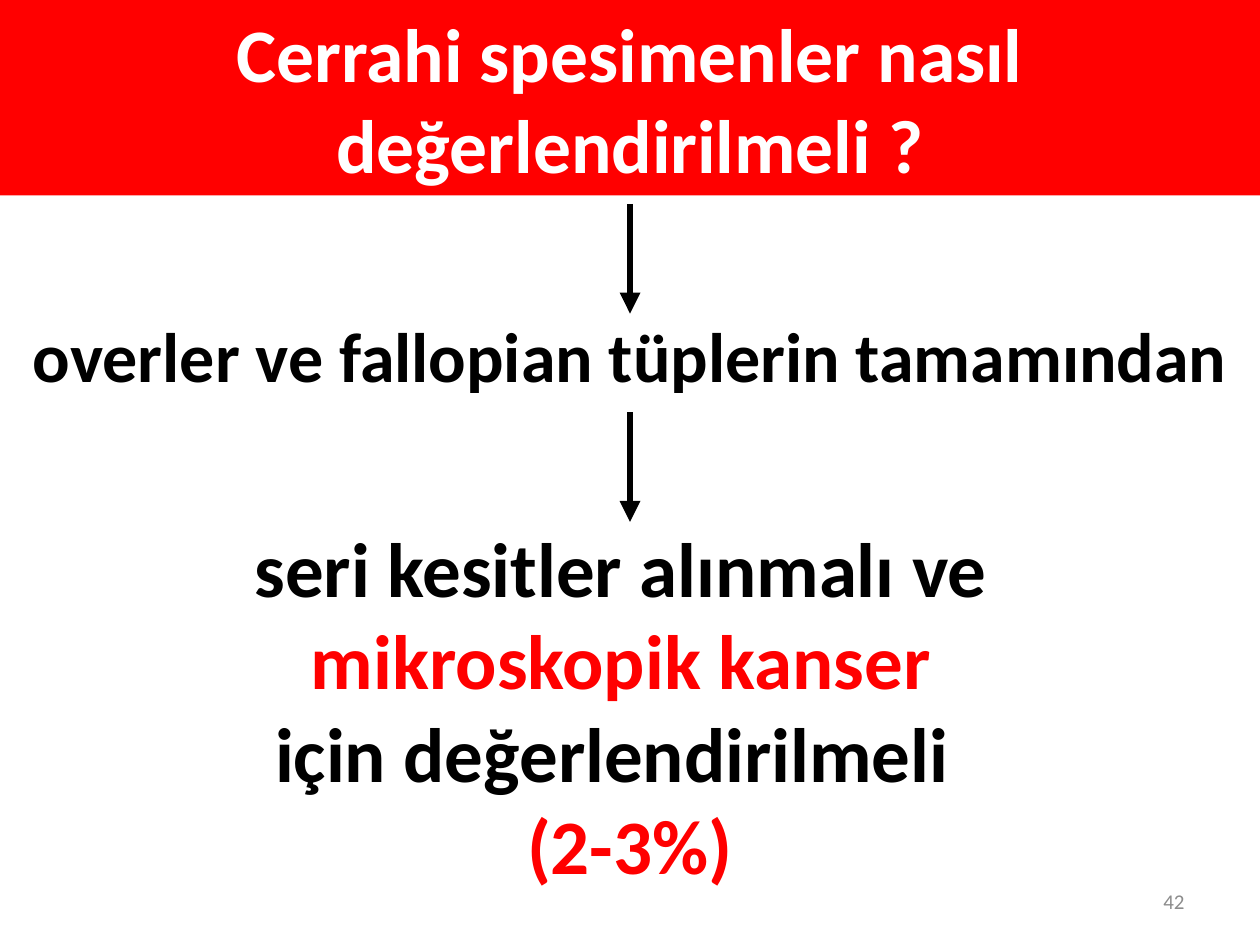
from dataclasses import dataclass

from lxml.etree import SubElement
from pptx import Presentation
from pptx.dml.color import RGBColor
from pptx.enum.shapes import MSO_CONNECTOR as Connector, MSO_SHAPE as Shape
from pptx.enum.text import MSO_ANCHOR as Anchor, PP_ALIGN as Align
from pptx.oxml.ns import qn
from pptx.util import Cm, Pt


@dataclass(frozen=True)
class Theme:
    font: str = "Calibri"
    red: RGBColor = RGBColor(255, 0, 0)
    white: RGBColor = RGBColor(255, 255, 255)
    black: RGBColor = RGBColor(0, 0, 0)
    gray: RGBColor = RGBColor(140, 140, 140)
    title_size: float = 43.2
    step_size: float = 40
    result_size: float = 44
    number_size: float = 12
    arrow_width: float = 4


THEME = Theme()
SLIDE_WIDTH, SLIDE_HEIGHT = 25.4, 19.05


def write_text(shape, lines, size, bold=True, align=Align.CENTER, anchor=Anchor.TOP):
    frame = shape.text_frame
    frame.word_wrap = True
    frame.vertical_anchor = anchor
    for index, (text, color) in enumerate(lines):
        paragraph = frame.add_paragraph() if index else frame.paragraphs[0]
        paragraph.alignment = align
        run = paragraph.add_run()
        run.text = text
        run.font.name = THEME.font
        run.font.size = Pt(size)
        run.font.bold = bold
        run.font.color.rgb = color


def add_text(slide, box, lines, size, **text_format):
    shape = slide.shapes.add_textbox(*map(Cm, box))
    write_text(shape, lines, size, **text_format)


def add_title_band(slide, box, title):
    band = slide.shapes.add_shape(Shape.RECTANGLE, *map(Cm, box))
    band.shadow.inherit = False
    band.fill.solid()
    band.fill.fore_color.rgb = THEME.red
    band.line.fill.background()
    write_text(band, [(title, THEME.white)], THEME.title_size, anchor=Anchor.MIDDLE)


def add_down_arrow(slide, center, top, length):
    arrow = slide.shapes.add_connector(
        Connector.STRAIGHT, Cm(center), Cm(top), Cm(center), Cm(top + length)
    )
    arrow.line.color.rgb = THEME.black
    arrow.line.width = Pt(THEME.arrow_width)
    SubElement(arrow.line._get_or_add_ln(), qn("a:tailEnd"), type="triangle")
    SubElement(arrow._element.spPr, qn("a:effectLst"))


def add_flow(slide, box, steps):
    left, top, width, height = box
    arrow_pitch, arrow_length, text_offset = 4.2, 2.21, 2.06
    for index, (lines, size, text_height) in enumerate(steps):
        arrow_top = top + index * arrow_pitch
        add_down_arrow(slide, left + width / 2, arrow_top, arrow_length)
        add_text(slide, (left, arrow_top + text_offset, width, text_height), lines, size)


def main():
    presentation = Presentation()
    presentation.slide_width = Cm(SLIDE_WIDTH)
    presentation.slide_height = Cm(SLIDE_HEIGHT)
    slide = presentation.slides.add_slide(presentation.slide_layouts[6])

    add_title_band(
        slide, (0, 0, SLIDE_WIDTH, 3.94), "Cerrahi spesimenler nasıl değerlendirilmeli ?"
    )
    specimen = [("overler ve fallopian tüplerin tamamından", THEME.black)]
    assessment = [
        ("seri kesitler alınmalı ve ", THEME.black),
        ("mikroskopik kanser ", THEME.red),
        ("için değerlendirilmeli  ", THEME.black),
        ("(2-3%)", THEME.red),
    ]
    add_flow(
        slide,
        (0, 4.11, SLIDE_WIDTH, 14.05),
        [(specimen, THEME.step_size, 1.96), (assessment, THEME.result_size, 7.77)],
    )
    add_text(
        slide, (18.21, 17.65, 5.92, 1.02), [("42", THEME.gray)], THEME.number_size,
        bold=False, align=Align.RIGHT, anchor=Anchor.MIDDLE,
    )
    presentation.save("out.pptx")


if __name__ == "__main__":
    main()
